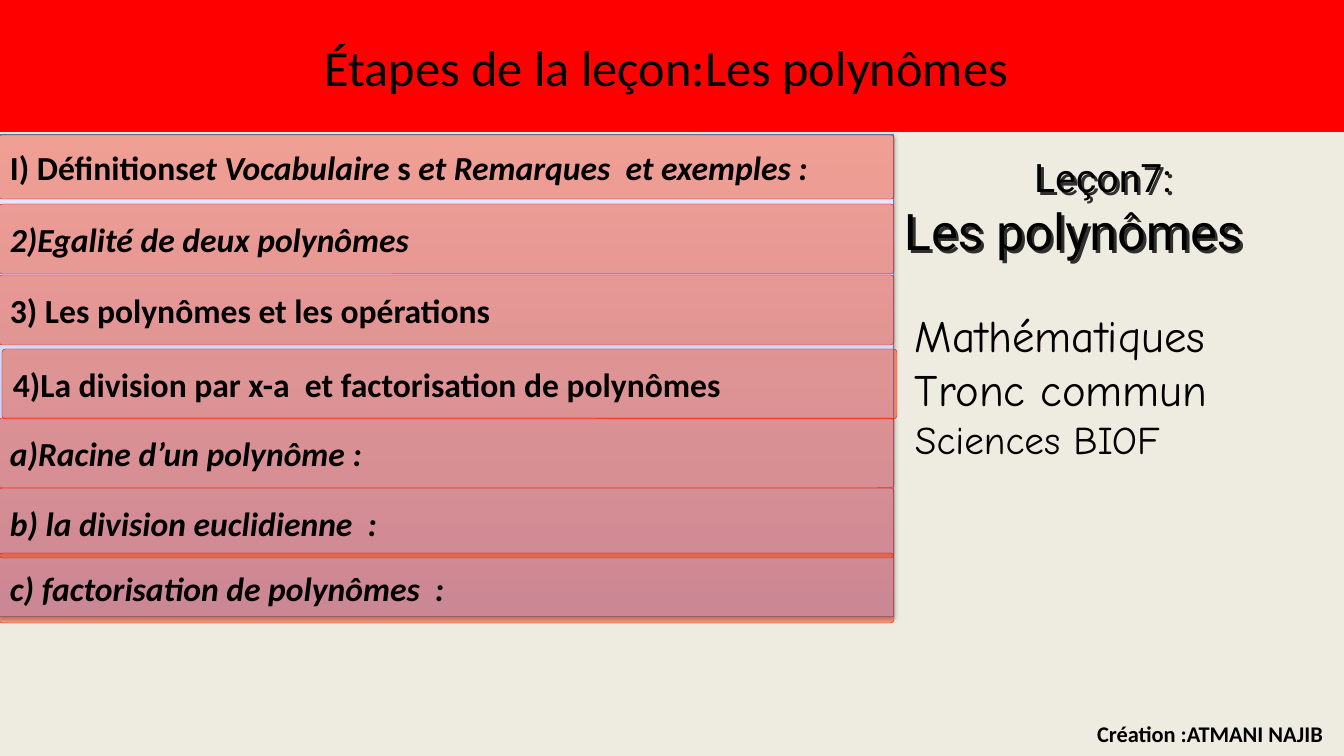
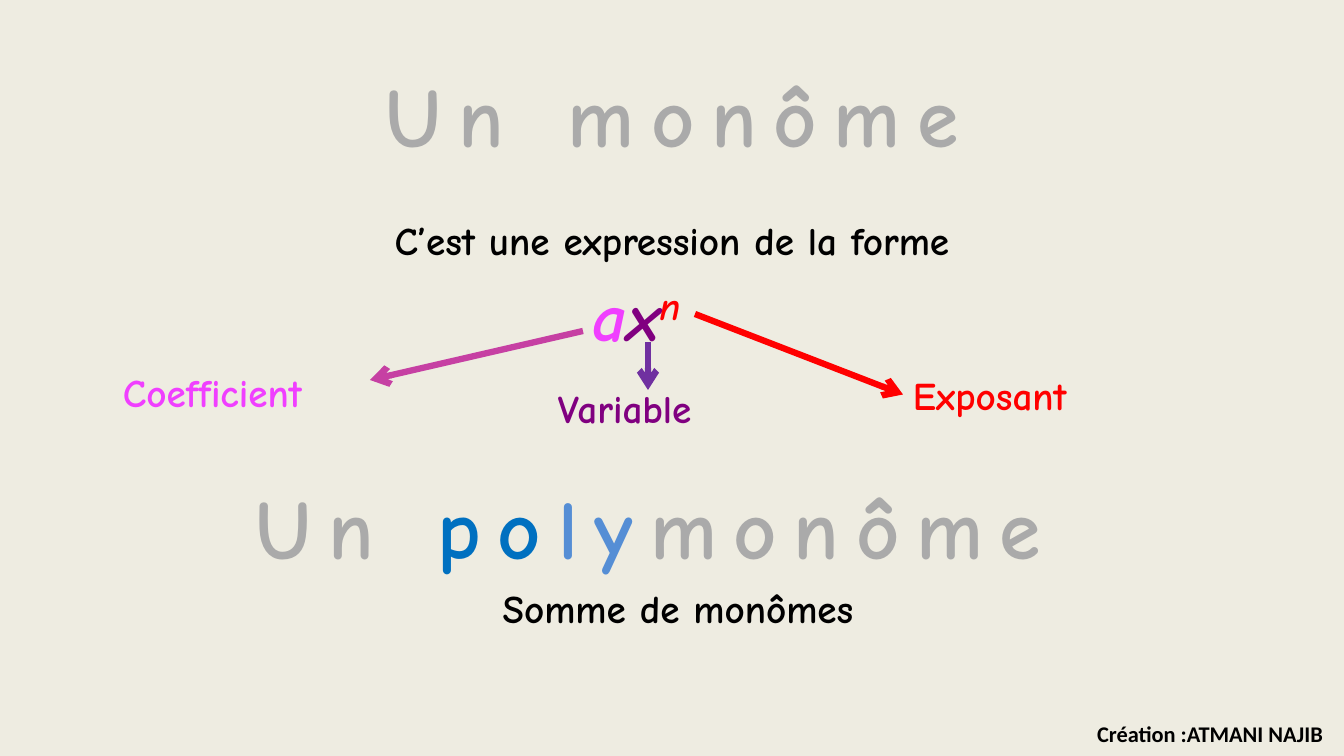
from copy import deepcopy

from lxml.etree import SubElement
from pptx import Presentation
from pptx.dml.color import RGBColor
from pptx.enum.shapes import MSO_CONNECTOR, MSO_SHAPE
from pptx.enum.text import MSO_ANCHOR, MSO_AUTO_SIZE, PP_ALIGN
from pptx.oxml.ns import qn
from pptx.util import Emu, Pt

EMU_PER_INCH = 914400
PX_PER_INCH = 100.8
COLORS = {
    "background": "EEECE1",
    "black": "000000",
    "red": "FF0000",
    "row": "FF3300",
    "panel_line": "4B7EBC",
    "coefficient": "F03FFF",
    "coefficient_arrow": "C640A3",
    "variable": "800080",
    "variable_arrow": "7030A0",
    "blue": "0070C0",
    "light_blue": "558ED5",
    "silver": "AAAAAA",
    "white": "FFFFFF",
    "panel_bottom": "A4C4FF",
    "panel_middle": "BFD4FF",
    "panel_top": "E6EEFF",
}
SILVER_FADE = [(0, "silver"), (1, "white")]
PANEL_FADE = [(0, "panel_bottom"), (0.35, "panel_middle"), (1, "panel_top")]


def px(length):
    return Emu(round(length * EMU_PER_INCH / PX_PER_INCH))


def rgb(name):
    return RGBColor.from_string(COLORS[name])


class Deck:
    plain_font = "Calibri"
    hand_font = "Comic Neue"
    lesson_font = "Roboto"

    def __init__(self):
        self.presentation = Presentation()
        self.presentation.slide_width = px(1344)
        self.presentation.slide_height = px(756)
        background = self.presentation.slide_master.background.fill
        background.solid()
        background.fore_color.rgb = rgb("background")
        self.slide = None

    def new_slide(self):
        layout = self.presentation.slide_layouts.get_by_name("Title Only")
        self.slide = self.presentation.slides.add_slide(layout)

    def footer(self):
        self.text((1039, 715, 294, 37), ["Création :ATMANI NAJIB"], 16,
                  self.plain_font, bold=True, align=PP_ALIGN.RIGHT)

    def gradient(self, fill, owner, stops, angle):
        fill.gradient()
        fill.gradient_angle = angle
        stop_list = next(owner.iter(qn("a:gsLst")))
        while len(stop_list) < len(stops):
            stop_list.append(deepcopy(stop_list[0]))
        for stop, (position, color) in zip(fill.gradient_stops, stops):
            stop.position = position
            stop.color.rgb = rgb(color)

    def shadow(self, shape, blur, distance, direction, opacity):
        shape.shadow.inherit = False
        effects = shape._element.spPr.find(qn("a:effectLst"))
        outer = SubElement(effects, qn("a:outerShdw"), blurRad=str(Pt(blur)),
                           dist=str(Pt(distance)), dir=str(direction * 60000),
                           rotWithShape="0")
        color = SubElement(outer, qn("a:srgbClr"), val=COLORS["black"])
        SubElement(color, qn("a:alpha"), val=str(opacity * 1000))

    def compose(self, paragraph, runs, size, font, color="black", bold=False,
                italic=False, align=PP_ALIGN.LEFT, spacing=0):
        paragraph.alignment = align
        paragraph.font.name = font
        paragraph.font.size = Pt(size)
        paragraph.font.bold = bold
        paragraph.font.italic = italic
        paragraph.font.color.rgb = rgb(color)
        for item in runs:
            text, changes = (item, {}) if isinstance(item, str) else item
            run = paragraph.add_run()
            run.text = text
            if "size" in changes:
                run.font.size = Pt(changes["size"])
            if "italic" in changes:
                run.font.italic = changes["italic"]
            if "color" in changes:
                run.font.color.rgb = rgb(changes["color"])
            if "fade" in changes:
                self.gradient(run.font.fill, run._r, changes["fade"], 270)
            properties = run._r.get_or_add_rPr()
            if "raised" in changes:
                properties.set("baseline", str(changes["raised"] * 1000))
            if spacing:
                properties.set("spc", str(spacing * 100))

    def title(self, box, runs, size, font, anchor, fill=None, **style):
        shape = self.slide.shapes.title
        shape.left, shape.top, shape.width, shape.height = map(px, box)
        if fill:
            shape.fill.solid()
            shape.fill.fore_color.rgb = rgb(fill)
        frame = shape.text_frame
        frame.auto_size = MSO_AUTO_SIZE.NONE
        frame.word_wrap = False
        frame.vertical_anchor = anchor
        self.compose(frame.paragraphs[0], runs, size, font,
                     align=PP_ALIGN.CENTER, **style)

    def text(self, box, runs, size, font, wrap=True, **style):
        shape = self.slide.shapes.add_textbox(*map(px, box))
        frame = shape.text_frame
        frame.word_wrap = wrap
        frame.auto_size = (MSO_AUTO_SIZE.SHAPE_TO_FIT_TEXT if wrap
                           else MSO_AUTO_SIZE.NONE)
        self.compose(frame.paragraphs[0], runs, size, font, **style)
        return shape

    def panel(self, box):
        shape = self.slide.shapes.add_shape(MSO_SHAPE.RECTANGLE, *map(px, box))
        self.gradient(shape.fill, shape._element, PANEL_FADE, 90)
        shape.line.color.rgb = rgb("panel_line")
        shape.line.width = Pt(0.75)
        self.shadow(shape, 3.1, 1.6, 90, 38)

    def row(self, box, runs, italic):
        shape = self.slide.shapes.add_shape(
            MSO_SHAPE.ROUNDED_RECTANGLE, *map(px, box))
        shape.adjustments[0] = 0.05
        shape.shadow.inherit = False
        shape.fill.solid()
        shape.fill.fore_color.rgb = rgb("row")
        color = shape._element.spPr.find(qn("a:solidFill"))[0]
        SubElement(color, qn("a:alpha"), val="42000")
        shape.line.color.rgb = rgb("red")
        shape.line.width = Pt(0.25)
        frame = shape.text_frame
        frame.word_wrap = True
        frame.vertical_anchor = MSO_ANCHOR.MIDDLE
        self.compose(frame.paragraphs[0], runs, 24, self.plain_font,
                     bold=True, italic=italic)

    def arrow(self, start, end, color, target=None):
        connector = self.slide.shapes.add_connector(
            MSO_CONNECTOR.STRAIGHT, *map(px, start + end))
        if target is not None:
            connector.end_connect(target, 1)
        connector.line.color.rgb = rgb(color)
        connector.line.width = Pt(4.5)
        properties = connector._element.spPr
        SubElement(properties.find(qn("a:ln")), qn("a:tailEnd"), type="arrow")
        SubElement(properties, qn("a:effectLst"))


def build_outline(deck):
    deck.new_slide()
    deck.title((0, 0, 1344, 132), ["Étapes de la leçon:Les polynômes "], 36,
               deck.plain_font, MSO_ANCHOR.MIDDLE, fill="red")
    deck.panel((-1, 135, 895, 482))
    upright = {"italic": False}
    rows = [
        (-1, 135, 64, True, [("I) Définitions", upright), "et Vocabulaire",
                             (" s ", upright), "et Remarques  et exemples :"]),
        (-1, 204, 70, True, ["2)Egalité de deux polynômes"]),
        (-1, 275, 70, False, ["3) Les polynômes et les opérations"]),
        (2, 349, 70, False,
         ["4)La division par x-a  et factorisation de polynômes"]),
        (-1, 418, 70, True, ["a)Racine d’un polynôme :"]),
        (-1, 488, 70, True, ["b) la division euclidienne  :"]),
        (-1, 553, 70, True, ["c) factorisation de polynômes  :"]),
    ]
    for left, top, height, italic, runs in rows:
        deck.row((left, top, 895, height), runs, italic)
    lesson = deck.text((894, 148, 418, 119), ["Leçon7:"], 28,
                       deck.lesson_font, align=PP_ALIGN.CENTER)
    deck.compose(lesson.text_frame.add_paragraph(), ["Les polynômes"], 36,
                 deck.lesson_font)
    deck.shadow(lesson, 0, 3, 45, 80)
    deck.text((905, 303, 418, 166),
              ["Mathématiques Tronc commun ", ("Sciences BIOF", {"size": 28})],
              32, deck.hand_font)
    deck.footer()


def build_monomial(deck):
    deck.new_slide()
    heading = {"size": 60, "font": deck.hand_font, "bold": True, "spacing": 12}
    label = {"size": 28, "font": deck.hand_font, "bold": True}
    faded = {"fade": SILVER_FADE}
    deck.title((370, 58, 605, 116), [("Un monôme", faded)],
               anchor=MSO_ANCHOR.TOP, **heading)
    deck.text((179, 211, 986, 57), ["C’est une expression de la forme"],
              align=PP_ALIGN.CENTER, **label)
    deck.text((583, 269, 140, 92),
              [("a", {"color": "coefficient"}), ("x", {"color": "variable"}),
               ("n", {"color": "red", "raised": 30})],
              48, deck.hand_font, bold=True, italic=True)
    deck.text((113, 363, 572, 57), ["Coefficient"], color="coefficient", **label)
    deck.text((548, 379, 269, 57), ["Variable"], color="variable", **label)
    exponent = deck.text((903, 366, 381, 57), ["Exposant"], color="red", **label)
    deck.text((346, 471, 605, 116),
              [("Un ", faded), ("po", {"color": "blue"}),
               ("ly", {"color": "light_blue"}), ("monôme", faded)],
              wrap=False, align=PP_ALIGN.CENTER, **heading)
    deck.text((192, 579, 986, 57), ["Somme de monômes "],
              align=PP_ALIGN.CENTER, **label)
    deck.arrow((583, 331), (370, 380), "coefficient_arrow")
    deck.arrow((648, 342), (648, 390), "variable_arrow")
    deck.arrow((695, 314), (903, 395), "red", exponent)
    deck.footer()


def main():
    deck = Deck()
    build_outline(deck)
    build_monomial(deck)
    deck.presentation.save("out.pptx")


if __name__ == "__main__":
    main()
